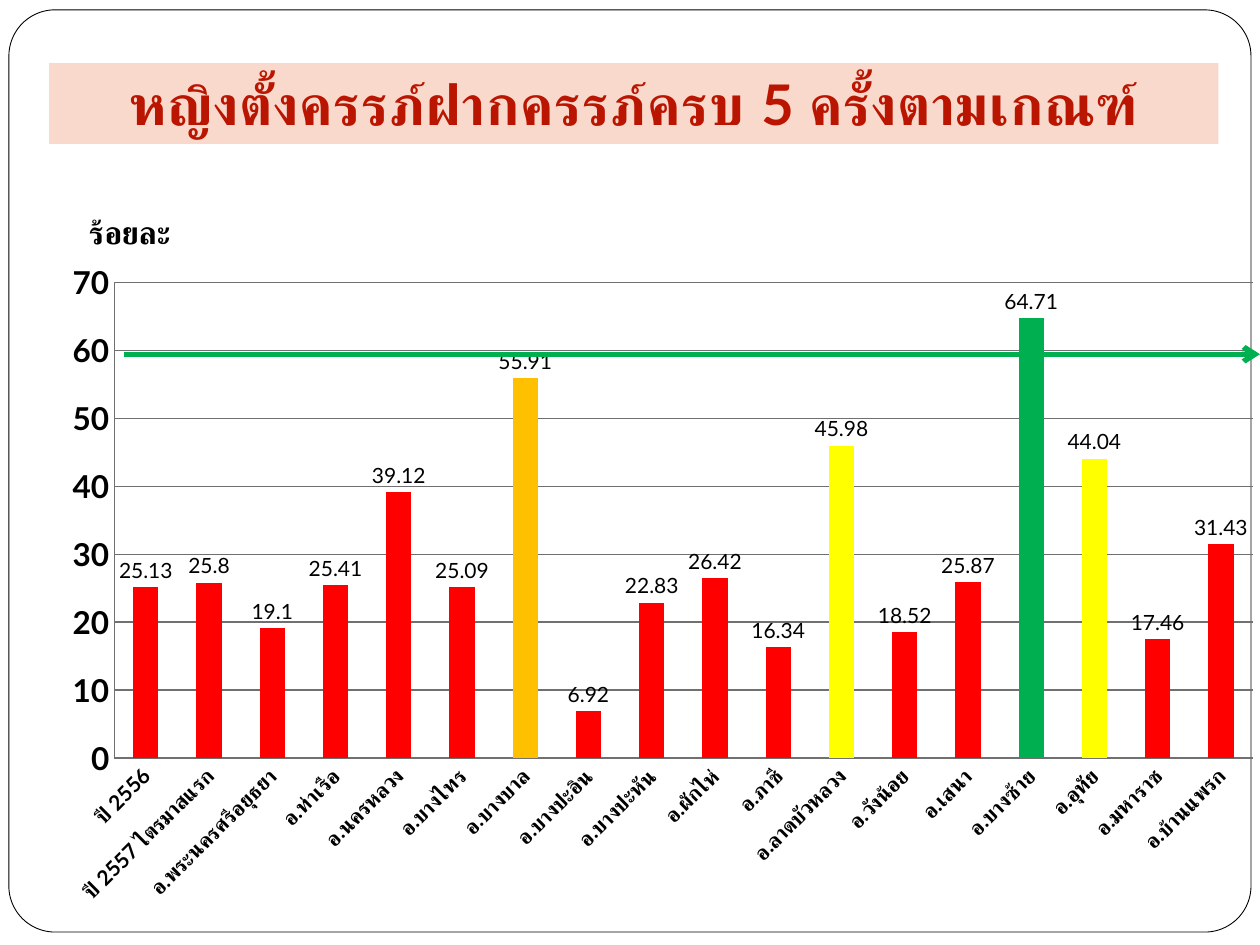
import pptx
import pptx.chart.data
import pptx.dml.color
import pptx.enum.chart
import pptx.enum.shapes
import pptx.enum.text
import pptx.oxml
import pptx.oxml.ns
import pptx.util
from pptx.util import Cm

RGBColor = pptx.dml.color.RGBColor
BLACK = RGBColor(0x00, 0x00, 0x00)
WHITE = RGBColor(0xFF, 0xFF, 0xFF)
GRID_GRAY = RGBColor(0x70, 0x70, 0x70)
PEACH = RGBColor(0xFA, 0xD9, 0xCD)
DARK_RED = RGBColor(0xBA, 0x15, 0x00)
RED = RGBColor(0xFF, 0x00, 0x00)
ORANGE = RGBColor(0xFF, 0xC0, 0x00)
YELLOW = RGBColor(0xFF, 0xFF, 0x00)
GREEN = RGBColor(0x00, 0xB0, 0x50)
FONT = "Lato"

HEADING = "หญิงตั้งครรภ์ฝากครรภ์ครบ 5 ครั้งตามเกณฑ์"
UNIT = "ร้อยละ"
COVERAGE = {
    "ปี 2556": 25.13, "ปี 2557 ไตรมาสแรก": 25.8,
    "อ.พระนครศรีอยุธยา": 19.1, "อ.ท่าเรือ": 25.41,
    "อ.นครหลวง": 39.12, "อ.บางไทร": 25.09,
    "อ.บางบาล": 55.91, "อ.บางปะอิน": 6.92,
    "อ.บางปะหัน": 22.83, "อ.ผักไห่": 26.42,
    "อ.ภาชี": 16.34, "อ.ลาดบัวหลวง": 45.98,
    "อ.วังน้อย": 18.52, "อ.เสนา": 25.87,
    "อ.บางซ้าย": 64.71, "อ.อุทัย": 44.04,
    "อ.มหาราช": 17.46, "อ.บ้านแพรก": 31.43,
}
# Lowest value for each bar colour, best first
LEVELS = [(60, GREEN), (50, ORANGE), (40, YELLOW), (0, RED)]


def apply_format(target, values):
    for attribute, value in values.items():
        setattr(target, attribute, value)


def format_font(font, size, bold, color=BLACK):
    apply_format(font, {"name": FONT, "size": pptx.util.Pt(size), "bold": bold})
    font.color.rgb = color


def to_cm(box):
    return [Cm(length) for length in box]


def manual_layout(**values):
    """Return a chart layout element holding the given settings."""
    settings = "".join(f'<c:{tag} val="{value}"/>' for tag, value in values.items())
    return pptx.oxml.parse_xml(
        f'<c:layout {pptx.oxml.ns.nsdecls("c")}>'
        f"<c:manualLayout>{settings}</c:manualLayout></c:layout>")


def add_frame(slide, box):
    frame = slide.shapes.add_shape(
        pptx.enum.shapes.MSO_SHAPE.ROUNDED_RECTANGLE, *to_cm(box))
    frame.adjustments[0] = 0.05
    frame.shadow.inherit = False
    frame.fill.solid()
    frame.fill.fore_color.rgb = WHITE
    frame.line.color.rgb = BLACK
    frame.line.width = pptx.util.Pt(0.5)
    # The frame lies behind the title placeholder
    slide.shapes.title._element.addprevious(frame._element)


def add_heading(slide, box):
    heading = slide.shapes.title
    apply_format(heading, dict(zip(("left", "top", "width", "height"), to_cm(box))))
    heading.fill.solid()
    heading.fill.fore_color.rgb = PEACH
    heading.text = HEADING
    apply_format(heading.text_frame, {
        "word_wrap": True,
        "auto_size": pptx.enum.text.MSO_AUTO_SIZE.NONE,
        "vertical_anchor": pptx.enum.text.MSO_ANCHOR.MIDDLE,
    })
    paragraph = heading.text_frame.paragraphs[0]
    paragraph.alignment = pptx.enum.text.PP_ALIGN.CENTER
    run = paragraph.runs[0]
    format_font(run.font, 32, True, DARK_RED)
    run.font._element.set("spc", "50")


def format_axes(chart):
    for axis, size in ((chart.category_axis, 12), (chart.value_axis, 18)):
        format_font(axis.tick_labels.font, size, True)
        axis.major_tick_mark = pptx.enum.chart.XL_TICK_MARK.NONE
        axis.format.line.color.rgb = GRID_GRAY
    chart.category_axis._element.txPr.bodyPr.set("rot", "-2700000")
    apply_format(chart.value_axis, {
        "minimum_scale": 0, "maximum_scale": 70, "major_unit": 10,
        "has_major_gridlines": True,
    })
    chart.value_axis.major_gridlines.format.line.color.rgb = GRID_GRAY


def format_bars(plot):
    apply_format(plot, {"gap_width": 150, "vary_by_categories": False,
                        "has_data_labels": True})
    apply_format(plot.data_labels, {
        "show_value": True,
        "position": pptx.enum.chart.XL_LABEL_POSITION.OUTSIDE_END,
    })
    format_font(plot.data_labels.font, 12, False)
    bars = plot.series[0]
    bars.format.fill.solid()
    bars.format.fill.fore_color.rgb = RED
    for index, value in enumerate(COVERAGE.values()):
        color = next(shade for floor, shade in LEVELS if value >= floor)
        if color != RED:
            fill = bars.points[index].format.fill
            fill.solid()
            fill.fore_color.rgb = color


def add_coverage_chart(slide, box):
    data = pptx.chart.data.CategoryChartData()
    data.categories = list(COVERAGE)
    data.add_series(UNIT, list(COVERAGE.values()))
    chart = slide.shapes.add_chart(
        pptx.enum.chart.XL_CHART_TYPE.COLUMN_CLUSTERED, *to_cm(box), data).chart
    apply_format(chart, {"has_legend": False, "has_title": True})
    apply_format(chart.font, {"name": "Times New Roman", "size": pptx.util.Pt(18)})
    format_axes(chart)
    format_bars(chart.plots[0])

    # Unit above the value axis
    unit = chart.chart_title
    unit.text_frame.text = UNIT
    format_font(unit.text_frame.paragraphs[0].runs[0].font, 18, True)
    unit_layout = unit._element.find(pptx.oxml.ns.qn("c:layout"))
    if unit_layout is not None:
        unit._element.remove(unit_layout)
    unit._element.find(pptx.oxml.ns.qn("c:tx")).addnext(
        manual_layout(xMode="edge", yMode="edge", x=0.05, y=0.04))

    # Plot area inside the axes
    plot_area = chart._chartSpace.chart.plotArea
    plot_layout = plot_area.find(pptx.oxml.ns.qn("c:layout"))
    if plot_layout is not None:
        plot_area.remove(plot_layout)
    plot_area.insert(0, manual_layout(
        layoutTarget="inner", xMode="edge", yMode="edge",
        x=0.075, y=0.135, w=0.919, h=0.621))


def add_target_line(slide, box):
    """Draw the 60 percent target across the chart box."""
    left, top, width, _ = box
    height = Cm(top + 3.53)
    target = slide.shapes.add_connector(
        pptx.enum.shapes.MSO_CONNECTOR.STRAIGHT,
        Cm(left + 2.06), height, Cm(left + width), height)
    target.line.color.rgb = GREEN
    target.line.width = pptx.util.Pt(3)
    namespace = pptx.oxml.ns.nsdecls("a")
    target.line._get_or_add_ln().append(
        pptx.oxml.parse_xml(f'<a:tailEnd {namespace} type="arrow"/>'))
    target._element.spPr.append(pptx.oxml.parse_xml(f"<a:effectLst {namespace}/>"))


def main():
    presentation = pptx.Presentation()
    apply_format(presentation, {"slide_width": Cm(25.4), "slide_height": Cm(19.05)})
    slide = presentation.slides.add_slide(presentation.slide_layouts[5])
    chart_box = (0.43, 3.61, 24.97, 15.44)
    add_frame(slide, (0.18, 0.2, 25.04, 18.59))
    add_coverage_chart(slide, chart_box)
    add_heading(slide, (0.99, 1.27, 23.57, 1.63))
    add_target_line(slide, chart_box)
    presentation.save("out.pptx")


if __name__ == "__main__":
    main()
